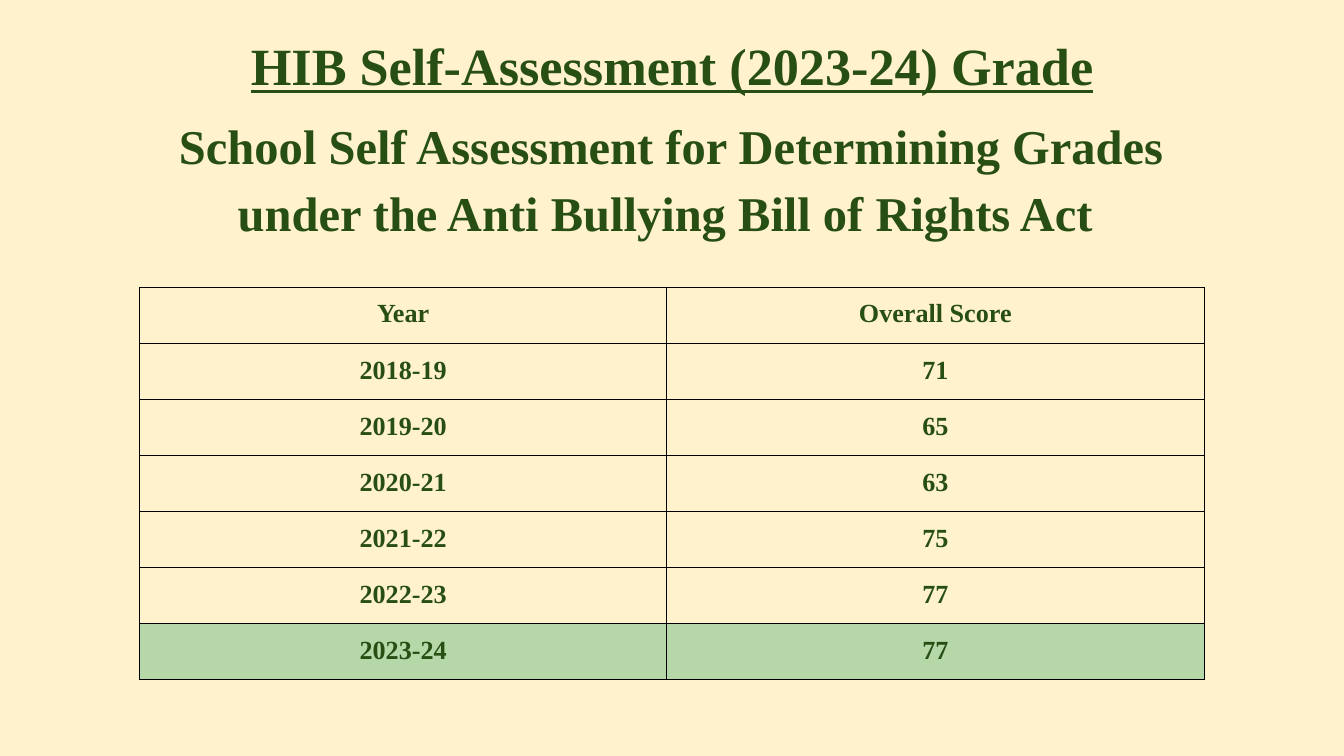
from lxml.etree import SubElement
from pptx import Presentation
from pptx.dml.color import RGBColor
from pptx.enum.text import MSO_ANCHOR, PP_ALIGN
from pptx.oxml.ns import qn
from pptx.util import Inches, Pt

CREAM, GREEN, HIGHLIGHT, BLACK = "FFF2CC", "274E13", "B6D7A8", "000000"
FONT = "Times New Roman"
SCORES = [
    ("Year", "Overall Score"),
    ("2018-19", "71"),
    ("2019-20", "65"),
    ("2020-21", "63"),
    ("2021-22", "75"),
    ("2022-23", "77"),
    ("2023-24", "77"),
]


def set_color(color_format, color):
    color_format.rgb = RGBColor.from_string(color)


def fill_solid(fill, color):
    fill.solid()
    set_color(fill.fore_color, color)


def write_text(text_frame, text, size, underline=None):
    """Write one centred bold paragraph and return it."""
    text_frame.text = text
    paragraph = text_frame.paragraphs[0]
    paragraph.alignment = PP_ALIGN.CENTER
    font = paragraph.runs[0].font
    font.name, font.size, font.bold = FONT, Pt(size), True
    font.underline = underline
    set_color(font.color, GREEN)
    return paragraph


def set_margins(target, vertical=0.1):
    target.margin_left = target.margin_right = Inches(0.1)
    target.margin_top = target.margin_bottom = Inches(vertical)


def add_heading(slide, box, text, size, underline=None):
    shape = slide.shapes.add_textbox(*map(Inches, box))
    text_frame = shape.text_frame
    text_frame.word_wrap = True
    text_frame.vertical_anchor = MSO_ANCHOR.TOP
    set_margins(text_frame)
    return write_text(text_frame, text, size, underline)


def set_borders(cell, color, width):
    properties = cell._tc.get_or_add_tcPr()
    for position, side in enumerate(("a:lnL", "a:lnR", "a:lnT", "a:lnB")):
        line = SubElement(properties, qn(side), w=str(Pt(width)))
        fill = SubElement(line, qn("a:solidFill"))
        SubElement(fill, qn("a:srgbClr"), val=color)
        # Borders come before the cell fill in the schema
        properties.insert(position, line)


def add_score_table(slide, left, top, column_widths, height):
    frame = slide.shapes.add_table(
        len(SCORES), len(column_widths), Inches(left), Inches(top),
        Inches(sum(column_widths)), Inches(height))
    table = frame.table
    table.first_row = table.horz_banding = False
    for column, width in zip(table.columns, column_widths):
        column.width = Inches(width)
    for row_index, values in enumerate(SCORES):
        table.rows[row_index].height = Inches(height / len(SCORES))
        is_latest = row_index == len(SCORES) - 1
        for column_index, value in enumerate(values):
            cell = table.cell(row_index, column_index)
            write_text(cell.text_frame, value, 14)
            set_margins(cell, vertical=0.09)
            fill_solid(cell.fill, HIGHLIGHT if is_latest else CREAM)
            set_borders(cell, BLACK, 0.75)


def build_slide(presentation):
    slide = presentation.slides.add_slide(presentation.slide_layouts[6])
    fill_solid(slide.background.fill, CREAM)

    # Title and subtitle
    add_heading(slide, (0.34, 0.15, 9.32, 0.63),
                "HIB Self-Assessment (2023-24) Grade", 28, underline=True)
    subtitle = add_heading(
        slide, (0.82, 0.7, 8.36, 1.91),
        "School Self Assessment for Determining Grades "
        "under the Anti Bullying Bill of Rights Act ", 26)
    subtitle.line_spacing = 1.15

    # Scores by year
    add_score_table(slide, 1.04, 2.14, (3.92, 4), 2.92)


def main():
    presentation = Presentation()
    # Widescreen, 16:9
    presentation.slide_width = Inches(10)
    presentation.slide_height = Inches(10 * 9 / 16)
    build_slide(presentation)
    presentation.save("out.pptx")


if __name__ == "__main__":
    main()
